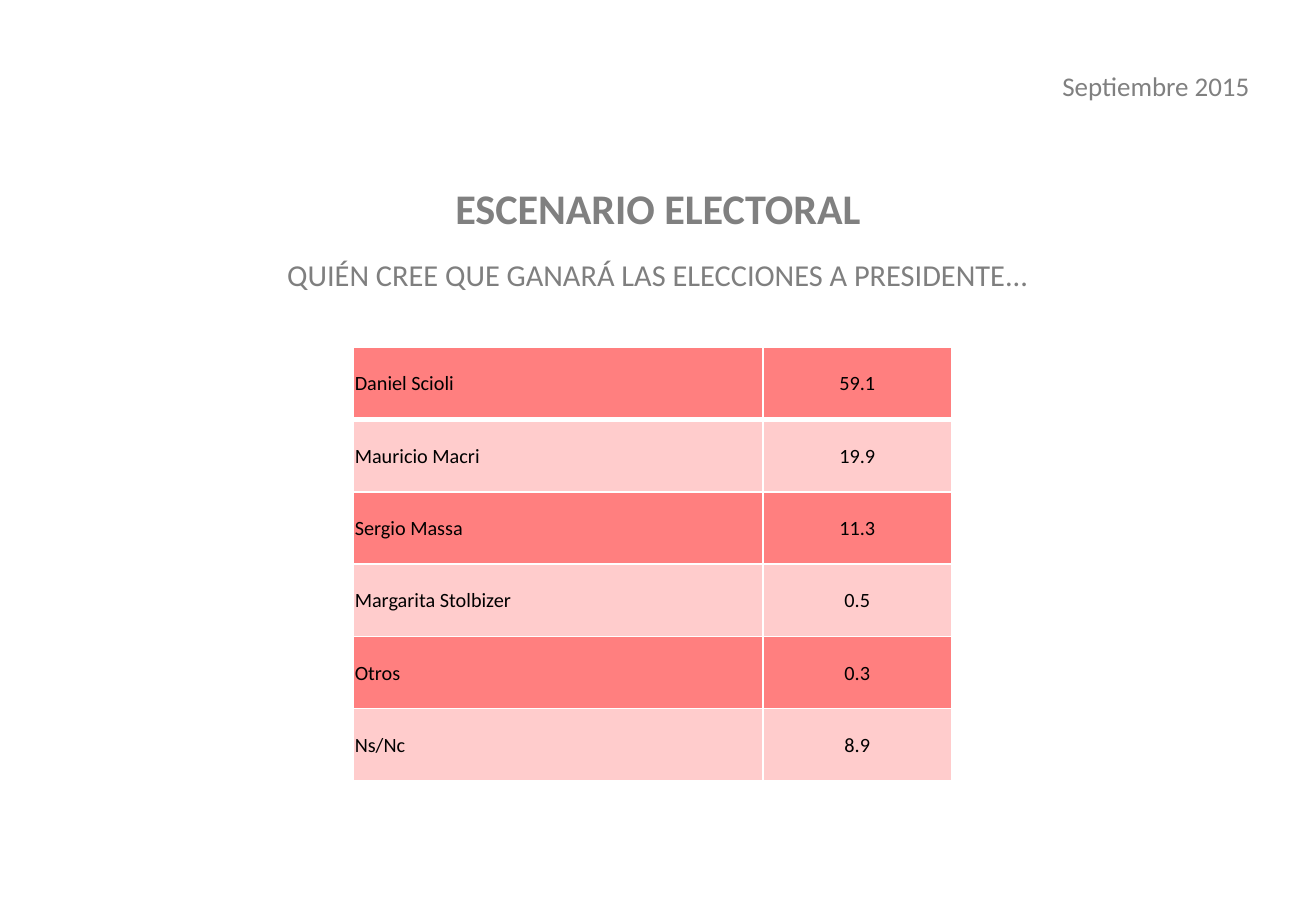
from lxml import etree
from pptx import Presentation
from pptx.dml.color import RGBColor
from pptx.enum.text import MSO_ANCHOR, PP_ALIGN
from pptx.oxml.ns import qn
from pptx.util import Inches, Pt

LEFT, CENTER, RIGHT = PP_ALIGN.LEFT, PP_ALIGN.CENTER, PP_ALIGN.RIGHT
TOP, MIDDLE, BOTTOM = MSO_ANCHOR.TOP, MSO_ANCHOR.MIDDLE, MSO_ANCHOR.BOTTOM
FONT = "Calibri"
GRAY = "808080"
BLACK = "000000"
WHITE = "FFFFFF"
RED = "FF0000"
COLUMN_WIDTHS = (3.37, 1.55)
BAND_OPACITIES = (50, 20)
RESULTS = (
    ("Daniel Scioli", "59.1"),
    ("Mauricio Macri", "19.9"),
    ("Sergio Massa", "11.3"),
    ("Margarita Stolbizer", "0.5"),
    ("Otros", "0.3"),
    ("Ns/Nc", "8.9"),
)


def color(value):
    return RGBColor.from_string(value)


def write(paragraph, text, size, text_color, alignment, bold=False):
    paragraph.text = text
    paragraph.alignment = alignment
    for run in paragraph.runs:
        run.font.name = FONT
        run.font.size = Pt(size)
        run.font.bold = bold
        run.font.color.rgb = color(text_color)


def add_text_box(slide, left, top, width, height, anchor):
    box = slide.shapes.add_textbox(Inches(left), Inches(top), Inches(width), Inches(height))
    text_frame = box.text_frame
    text_frame.word_wrap = True
    text_frame.vertical_anchor = anchor
    return text_frame


def add_border(properties, side, width):
    line = etree.SubElement(properties, qn(f"a:ln{side}"), w=str(Pt(width)))
    fill = etree.SubElement(line, qn("a:solidFill"))
    etree.SubElement(fill, qn("a:srgbClr"), val=WHITE)


def format_cell(cell, opacity, top_border, bottom_border):
    cell.vertical_anchor = MIDDLE
    cell.margin_left = cell.margin_right = cell.margin_top = Inches(0.01)
    cell.margin_bottom = 0
    properties = cell._tc.get_or_add_tcPr()
    for side, width in (("L", 1), ("R", 1), ("T", top_border), ("B", bottom_border)):
        add_border(properties, side, width)
    cell.fill.solid()
    cell.fill.fore_color.rgb = color(RED)
    fill_color = properties.find(qn("a:solidFill")).find(qn("a:srgbClr"))
    etree.SubElement(fill_color, qn("a:alpha"), val=str(opacity * 1000))


def add_results_table(slide):
    frame = slide.shapes.add_table(
        len(RESULTS), len(COLUMN_WIDTHS),
        Inches(2.91), Inches(2.86), Inches(sum(COLUMN_WIDTHS)), Inches(3.57),
    )
    table = frame.table
    for column, width in zip(table.columns, COLUMN_WIDTHS):
        column.width = Inches(width)
    for row, result in enumerate(RESULTS):
        opacity = BAND_OPACITIES[row % 2]
        top_border = 3 if row == 1 else 1
        bottom_border = 3 if row == 0 else 1
        for column, (text, alignment) in enumerate(zip(result, (LEFT, CENTER))):
            cell = table.cell(row, column)
            format_cell(cell, opacity, top_border, bottom_border)
            write(cell.text_frame.paragraphs[0], text, 12, BLACK, alignment)


def add_heading(slide):
    heading = add_text_box(slide, 0, 1.28, 10.83, 1.64, BOTTOM)
    heading.margin_bottom = Inches(0.51)
    title = heading.paragraphs[0]
    write(title, "ESCENARIO ELECTORAL", 25, GRAY, CENTER, bold=True)
    question = heading.add_paragraph()
    write(question, "QUIÉN CREE QUE GANARÁ LAS ELECCIONES A PRESIDENTE...", 18, "7F7F7F", CENTER)
    question.space_before = Pt(18.5)
    for paragraph in (title, question):
        paragraph.line_spacing = 0.8


def add_date(slide):
    date = add_text_box(slide, 8.57, 0.52, 1.81, 0.37, TOP)
    write(date.paragraphs[0], "Septiembre 2015", 16, GRAY, RIGHT)


def main():
    presentation = Presentation()
    presentation.slide_width = Inches(10.83)
    presentation.slide_height = Inches(7.5)
    slide = presentation.slides.add_slide(presentation.slide_layouts[6])
    add_results_table(slide)
    add_heading(slide)
    add_date(slide)
    presentation.save("out.pptx")


if __name__ == "__main__":
    main()
